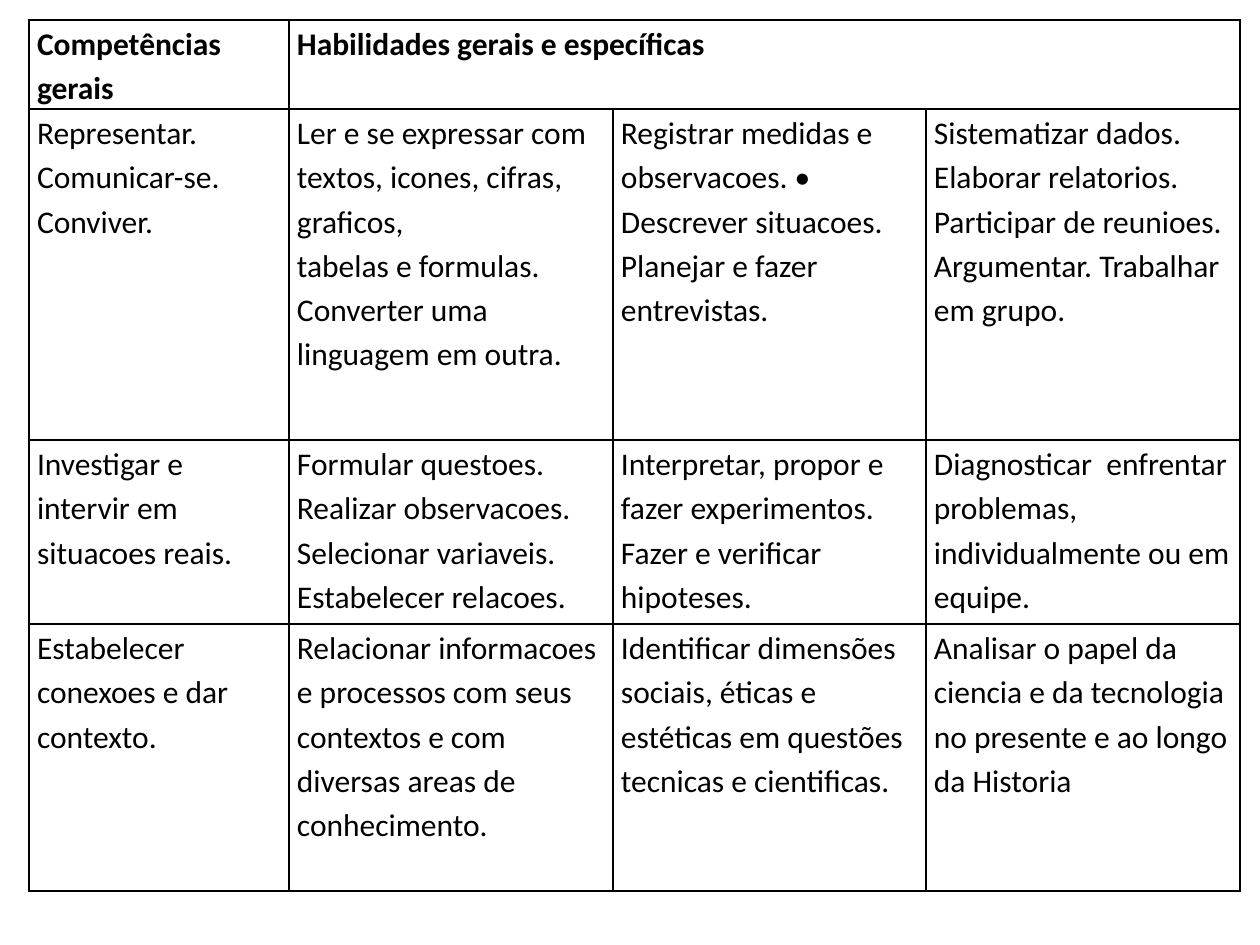
from pptx import Presentation
from pptx.dml.color import RGBColor
from pptx.oxml import parse_xml
from pptx.oxml.ns import nsdecls
from pptx.util import Emu, Pt

PX = 914400 / 126
BLACK = RGBColor(0x00, 0x00, 0x00)


def px(n):
    return Emu(round(n * PX))


def add_borders(cell):
    """Draw a thin line on each side; borders precede the fill in tcPr."""
    for i, side in enumerate(("lnL", "lnR", "lnT", "lnB")):
        cell._tc.get_or_add_tcPr().insert(i, parse_xml(
            f'<a:{side} {nsdecls("a")} w="{Pt(1)}"><a:solidFill>'
            f'<a:srgbClr val="{BLACK}"/></a:solidFill></a:{side}>'))


prs = Presentation()
prs.slide_width, prs.slide_height = px(1260), px(945)
slide = prs.slides.add_slide(prs.slide_layouts[6])

# Content: one list per row, paragraphs split at line ends
skills = [
    ["Competências\ngerais", "Habilidades gerais e específicas", "", ""],
    ["Representar.\nComunicar-se.\nConviver.",
     "Ler e se expressar com textos, icones, cifras, graficos,\n"
     "tabelas e formulas.\nConverter uma linguagem em outra.",
     "Registrar medidas e\nobservacoes. • Descrever situacoes. "
     "Planejar e fazer entrevistas.",
     "Sistematizar dados.\nElaborar relatorios. Participar de reunioes. "
     "Argumentar. Trabalhar em grupo."],
    ["Investigar e intervir em situacoes reais.",
     "Formular questoes. Realizar observacoes. Selecionar variaveis. "
     "Estabelecer relacoes.",
     "Interpretar, propor e fazer experimentos. Fazer e verificar hipoteses.",
     "Diagnosticar  enfrentar problemas, individualmente ou em equipe."],
    ["Estabelecer conexoes e dar contexto.",
     "Relacionar informacoes e processos com seus contextos e com diversas "
     "areas de conhecimento.",
     "Identificar dimensões sociais, éticas e estéticas em questões tecnicas "
     "e cientificas.",
     "Analisar o papel da ciencia e da tecnologia no presente e ao longo "
     "da Historia"],
]
col_widths = [260, 324, 313, 314]
row_heights = [89, 331, 184, 267]

# Table grid
grid = slide.shapes.add_table(
    len(row_heights), len(col_widths), px(29), px(20),
    px(sum(col_widths)), px(sum(row_heights))).table
grid.horz_banding = False
for column, width in zip(grid.columns, col_widths):
    column.width = px(width)
for row, height in zip(grid.rows, row_heights):
    row.height = px(height)
grid.cell(0, 1).merge(grid.cell(0, 3))

# Cell text and style
for r, row_texts in enumerate(skills):
    for c, text in enumerate(row_texts):
        cell = grid.cell(r, c)
        cell.margin_left = cell.margin_right = px(8)
        cell.margin_top = cell.margin_bottom = 0
        cell.fill.background()
        add_borders(cell)
        if cell.is_spanned:
            continue
        cell.text = text
        for paragraph in cell.text_frame.paragraphs:
            paragraph.line_spacing = 1.15
            paragraph.font.name = "Calibri"
            paragraph.font.size = Pt(18)
            paragraph.font.bold = r == 0
            paragraph.font.color.rgb = BLACK

prs.save("out.pptx")
